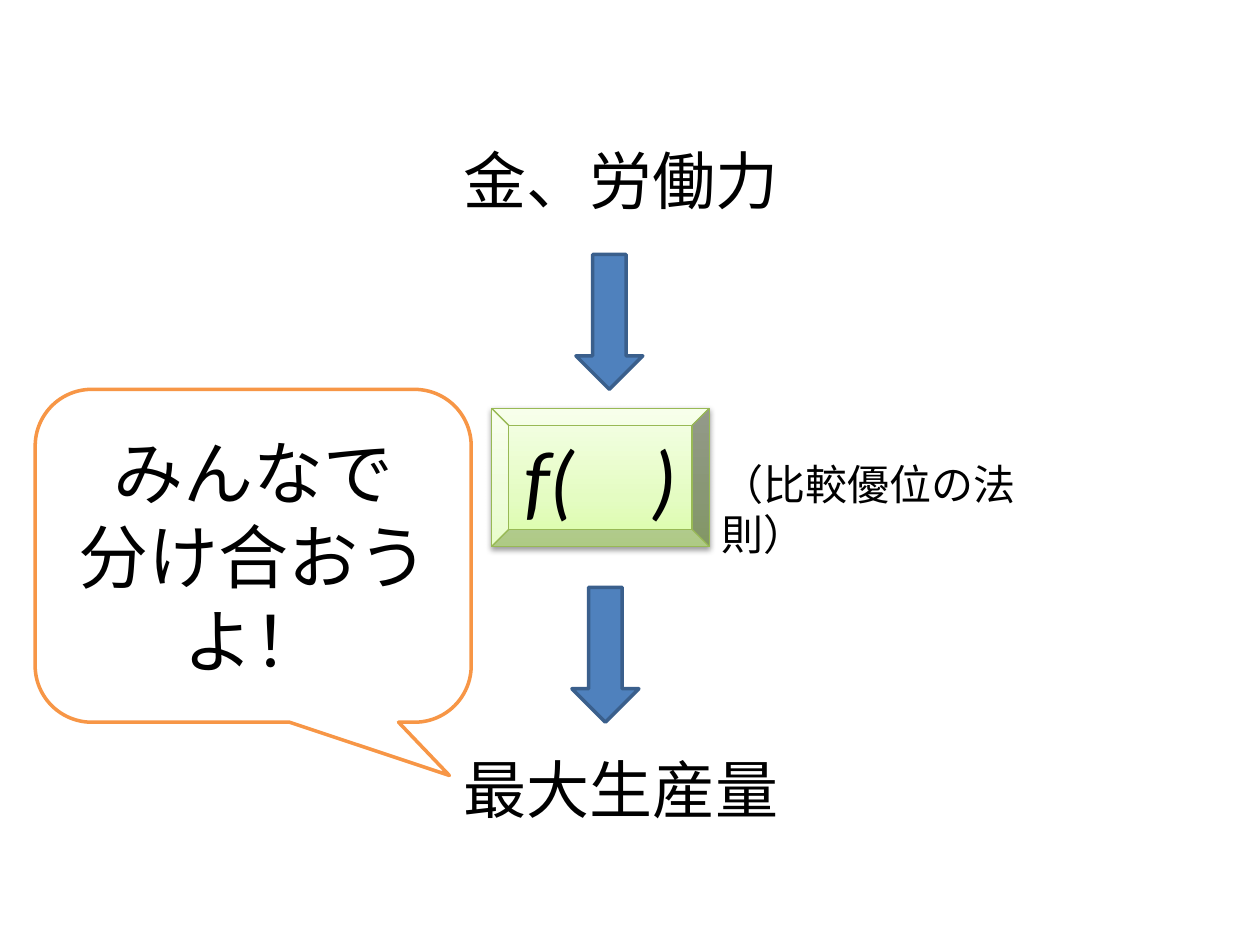
import copy

import pptx
import pptx.dml.color
import pptx.enum.shapes
import pptx.enum.text
import pptx.oxml
import pptx.oxml.ns
import pptx.util
from pptx.util import Cm

RGBColor = pptx.dml.color.RGBColor
Shape = pptx.enum.shapes.MSO_SHAPE
Align = pptx.enum.text.PP_ALIGN
Anchor = pptx.enum.text.MSO_ANCHOR
BLACK = RGBColor(0x00, 0x00, 0x00)
WHITE = RGBColor(0xFF, 0xFF, 0xFF)
BLUE = RGBColor(0x4F, 0x81, 0xBD)
DARK_BLUE = RGBColor(0x3A, 0x5F, 0x8C)
ORANGE = RGBColor(0xF7, 0x96, 0x46)
GREEN = RGBColor(0x98, 0xB9, 0x55)
GREEN_STOPS = [
    (0, RGBColor(0xDA, 0xFD, 0xA7)),
    (0.35, RGBColor(0xE4, 0xFC, 0xC2)),
    (1, RGBColor(0xF5, 0xFF, 0xE7)),
]
SHADOW = (
    '<a:outerShdw xmlns:a="http://schemas.openxmlformats.org/drawingml/2006/main"'
    ' blurRad="40000" dist="20000" dir="5400000" rotWithShape="0">'
    '<a:srgbClr val="000000"><a:alpha val="38000"/></a:srgbClr></a:outerShdw>'
)


def write_text(shape, text, size, align=Align.LEFT, anchor=Anchor.TOP, italic=None, wrap=True):
    """Write the lines of text into a shape, one paragraph each."""
    frame = shape.text_frame
    frame.word_wrap = wrap
    frame.vertical_anchor = anchor
    frame.text = text
    for paragraph in frame.paragraphs:
        paragraph.alignment = align
        font = paragraph.runs[0].font
        font.name = "Calibri"
        font.size = pptx.util.Pt(size)
        font.italic = italic
        font.color.rgb = BLACK


def add_label(slide, box, text, size, **text_format):
    """Add a text box that grows with its text."""
    label = slide.shapes.add_textbox(*box)
    write_text(label, text, size, **text_format)
    label.text_frame.auto_size = pptx.enum.text.MSO_AUTO_SIZE.SHAPE_TO_FIT_TEXT


def add_outlined(slide, preset, box, line_color, line_width, fill_color=None):
    """Add a preset shape with an outline, no shadow and an optional solid fill."""
    shape = slide.shapes.add_shape(preset, *box)
    shape.shadow.inherit = False
    shape.line.color.rgb = line_color
    shape.line.width = pptx.util.Pt(line_width)
    if fill_color is not None:
        shape.fill.solid()
        shape.fill.fore_color.rgb = fill_color
    return shape


def add_function_box(slide, box):
    """Add the bevelled function with its green gradient and soft shadow."""
    function = add_outlined(slide, Shape.BEVEL, box, GREEN, 0.75)
    function.fill.gradient()
    function.fill.gradient_angle = 90
    properties = function.element.spPr
    stop_list = properties.find(".//" + pptx.oxml.ns.qn("a:gsLst"))
    stop_list.append(copy.deepcopy(stop_list[-1]))
    for stop, (position, color) in zip(function.fill.gradient_stops, GREEN_STOPS):
        stop.position = position
        stop.color.rgb = color
    effects = properties.find(pptx.oxml.ns.qn("a:effectLst"))
    effects.append(pptx.oxml.parse_xml(SHADOW))
    write_text(function, "f(    )", 48, align=Align.CENTER, anchor=Anchor.MIDDLE, italic=True)


def add_flow(slide, left, top, width, height):
    """Place the flow from the inputs through the function to the output."""
    label_height = Cm(1.8)
    add_label(slide, (left, top, Cm(8.2), label_height), "金、労働力", 36)
    for arrow_left, arrow_top in ((Cm(2.52), Cm(2.41)), (Cm(2.44), Cm(9.12))):
        arrow_box = (left + arrow_left, top + arrow_top, Cm(1.35), Cm(2.72))
        add_outlined(slide, Shape.DOWN_ARROW, arrow_box, DARK_BLUE, 2, BLUE)
    note_width = Cm(8)
    note_box = (left + width - note_width, top + Cm(6.4), note_width, Cm(1.27))
    add_label(slide, note_box, "（比較優位の法則）", 24)
    add_function_box(slide, (left + Cm(0.82), top + Cm(5.51), Cm(4.39), Cm(2.79)))
    output_box = (left, top + height - label_height, Cm(6.93), label_height)
    add_label(slide, output_box, "最大生産量", 36, wrap=False)


def add_callout(slide, left, top, width, height):
    """Place the speech bubble that points to the output."""
    callout = add_outlined(
        slide, Shape.ROUNDED_RECTANGULAR_CALLOUT, (left, top, width, height), ORANGE, 2, WHITE
    )
    for index, value in enumerate((0.45, 0.66, 0.17)):
        callout.adjustments[index] = value
    write_text(callout, "みんなで\n分け合おうよ！", 40, align=Align.CENTER, anchor=Anchor.MIDDLE)


def main():
    """Build the slide and save it."""
    presentation = pptx.Presentation()
    presentation.slide_width = Cm(25.4)
    presentation.slide_height = Cm(19.05)
    slide = presentation.slides.add_slide(presentation.slide_layouts[6])
    add_flow(slide, Cm(9.09), Cm(2.72), Cm(13.2), Cm(14.09))
    add_callout(slide, Cm(0.71), Cm(7.85), Cm(8.79), Cm(6.71))
    presentation.save("out.pptx")


if __name__ == "__main__":
    main()
